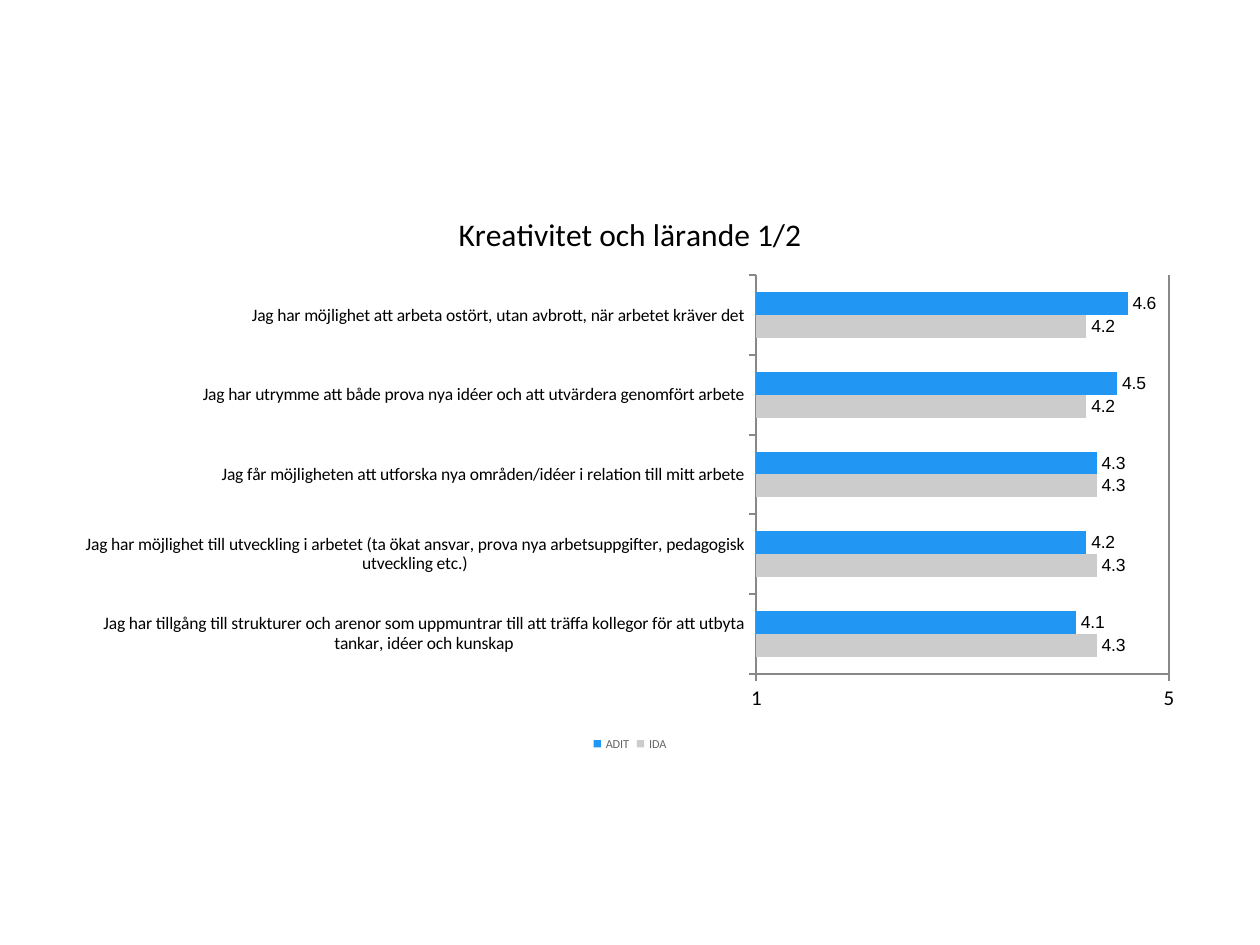
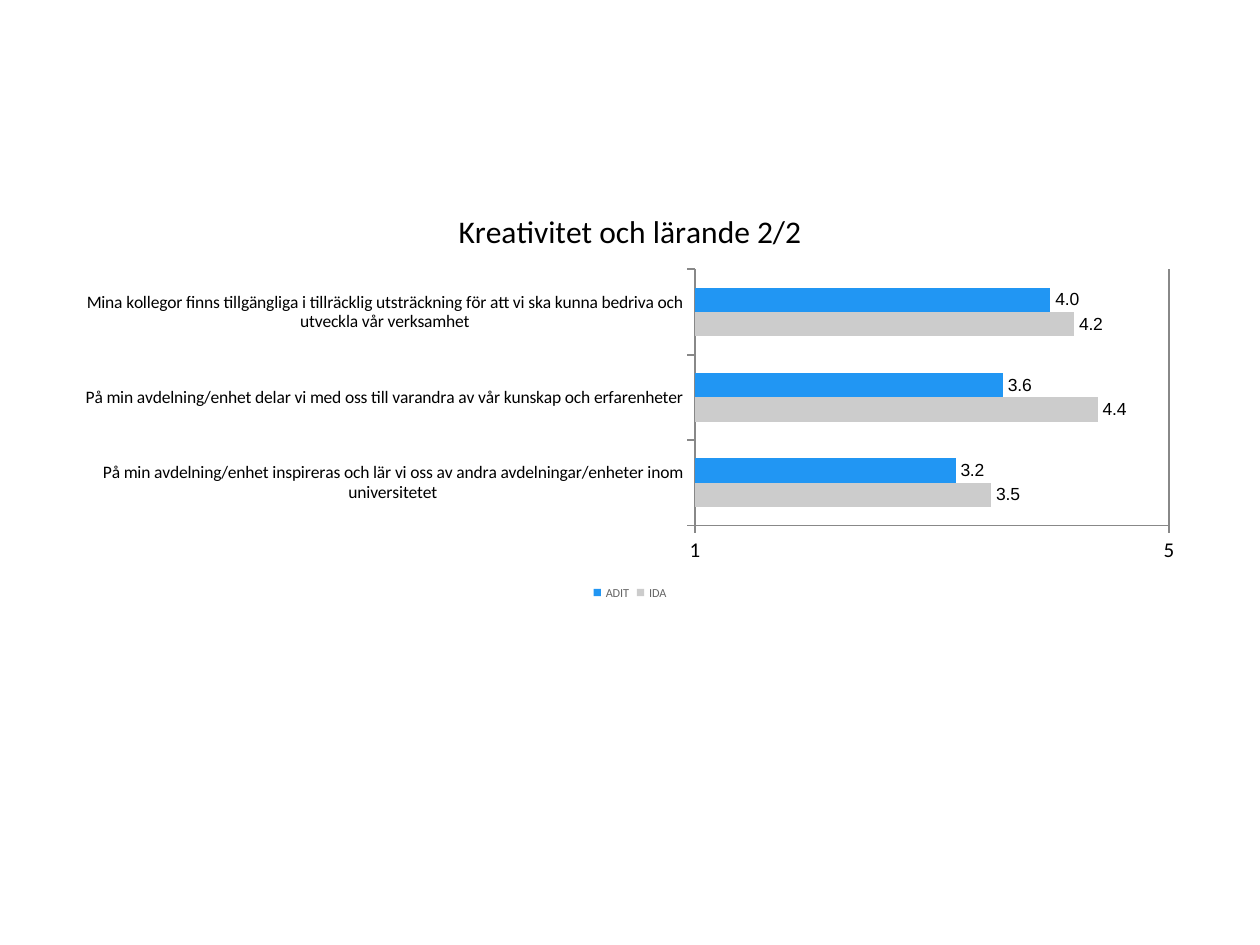
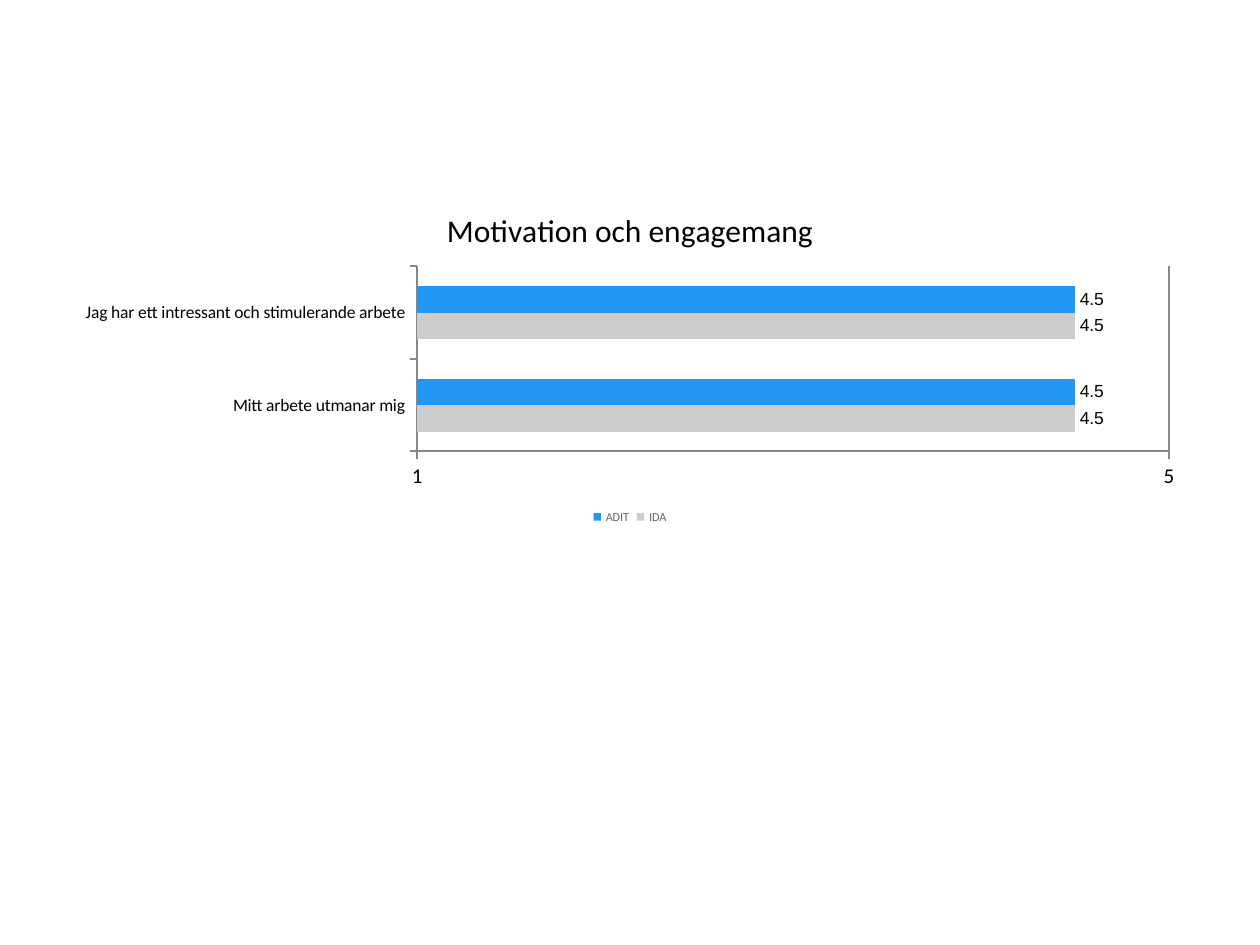
from pptx import Presentation
from pptx.chart.data import CategoryChartData
from pptx.dml.color import RGBColor
from pptx.enum.chart import XL_CHART_TYPE as ChartType
from pptx.enum.chart import XL_LABEL_POSITION as LabelPosition
from pptx.enum.chart import XL_LEGEND_POSITION as LegendPosition
from pptx.enum.chart import XL_TICK_LABEL_POSITION as TickLabels
from pptx.enum.chart import XL_TICK_MARK as TickMark
from pptx.util import Inches, Pt

BLACK, AXIS_GREY, LEGEND_GREY = "000000", "888888", "666666"
SERIES_COLORS = {"IDA": "CCCCCC", "ADIT": "2196F3"}

# Each page: title, then (statement, ADIT mean, IDA mean) from top to bottom.
SURVEY = [
    ("Kreativitet och lärande 1/2", [
        ("Jag har möjlighet att arbeta ostört, utan avbrott, när arbetet kräver det", 4.6, 4.2),
        ("Jag har utrymme att både prova nya idéer och att utvärdera genomfört arbete", 4.5, 4.2),
        ("Jag får möjligheten att utforska nya områden/idéer i relation till mitt arbete", 4.3, 4.3),
        ("Jag har möjlighet till utveckling i arbetet (ta ökat ansvar, prova nya "
         "arbetsuppgifter, pedagogisk utveckling etc.)", 4.2, 4.3),
        ("Jag har tillgång till strukturer och arenor som uppmuntrar till att träffa "
         "kollegor för att utbyta tankar, idéer och kunskap", 4.1, 4.3),
    ]),
    ("Kreativitet och lärande 2/2", [
        ("Mina kollegor finns tillgängliga i tillräcklig utsträckning för att vi ska "
         "kunna bedriva och utveckla vår verksamhet", 4.0, 4.2),
        ("På min avdelning/enhet delar vi med oss till varandra av vår kunskap och "
         "erfarenheter", 3.6, 4.4),
        ("På min avdelning/enhet inspireras och lär vi oss av andra avdelningar/enheter "
         "inom universitetet", 3.2, 3.5),
    ]),
    ("Motivation och engagemang", [
        ("Jag har ett intressant och stimulerande arbete", 4.5, 4.5),
        ("Mitt arbete utmanar mig", 4.5, 4.5),
    ]),
]


def color(hex_code):
    return RGBColor.from_string(hex_code)


class SurveyDeck:
    def __init__(self):
        self.deck = Presentation()
        self.deck.slide_width, self.deck.slide_height = Inches(10), Inches(7.5)
        self.page = None

    def add_page(self):
        self.page = self.deck.slides.add_slide(self.deck.slide_layouts[6])

    def style_font(self, font, size, hex_code=BLACK, name="Calibri"):
        font.name, font.size, font.bold = name, Pt(size), False
        font.color.rgb = color(hex_code)

    def style_line(self, line):
        line.color.rgb = color(AXIS_GREY)
        line.width = Pt(1)

    def add_bar_chart(self, title, rows):
        """Add a titled bar chart whose height grows with its number of rows."""
        # Bar charts are filled from the bottom upwards.
        statements, adit, ida = zip(*reversed(rows))
        data = CategoryChartData()
        data.categories = statements
        data.add_series("IDA", ida)
        data.add_series("ADIT", adit)

        width, height = self.deck.slide_width, self.deck.slide_height
        chart = self.page.shapes.add_chart(
            ChartType.BAR_CLUSTERED, int(0.05 * width), int(0.2 * height),
            int(0.9 * width), int((0.2 + 0.08 * len(rows)) * height), data).chart
        self.style_font(chart.font, 10)
        self.add_title(chart, title)
        self.add_legend(chart)
        self.style_axes(chart)
        self.style_bars(chart.plots[0])

    def add_title(self, chart, title):
        chart.has_title = True
        chart.chart_title.include_in_layout = False
        frame = chart.chart_title.text_frame
        frame.text = title
        self.style_font(frame.paragraphs[0].font, 18)

    def add_legend(self, chart):
        chart.has_legend = True
        chart.legend.position = LegendPosition.BOTTOM
        chart.legend.include_in_layout = False
        self.style_font(chart.legend.font, 7, LEGEND_GREY)

    def style_axes(self, chart):
        scale = chart.value_axis
        scale.minimum_scale, scale.maximum_scale, scale.major_unit = 1, 5, 4
        scale.has_major_gridlines = True
        self.style_line(scale.major_gridlines.format.line)
        for axis, size in ((chart.category_axis, 10), (scale, 12)):
            axis.major_tick_mark = TickMark.OUTSIDE
            axis.minor_tick_mark = TickMark.NONE
            axis.tick_label_position = TickLabels.NEXT_TO_AXIS
            axis.tick_labels.number_format = "General"
            axis.tick_labels.number_format_is_linked = False
            self.style_font(axis.tick_labels.font, size)
            self.style_line(axis.format.line)

    def style_bars(self, plot):
        plot.gap_width = 150
        plot.vary_by_categories = False
        for series in plot.series:
            series.invert_if_negative = False
            series.format.fill.solid()
            series.format.fill.fore_color.rgb = color(SERIES_COLORS[series.name])
            labels = series.data_labels
            labels.show_value = True
            labels.position = LabelPosition.OUTSIDE_END
            labels.number_format = "##.0"
            labels.number_format_is_linked = False
            self.style_font(labels.font, 10, name="Arial")


def main():
    survey = SurveyDeck()
    for title, rows in SURVEY:
        survey.add_page()
        survey.add_bar_chart(title, rows)
    survey.deck.save("out.pptx")


if __name__ == "__main__":
    main()
